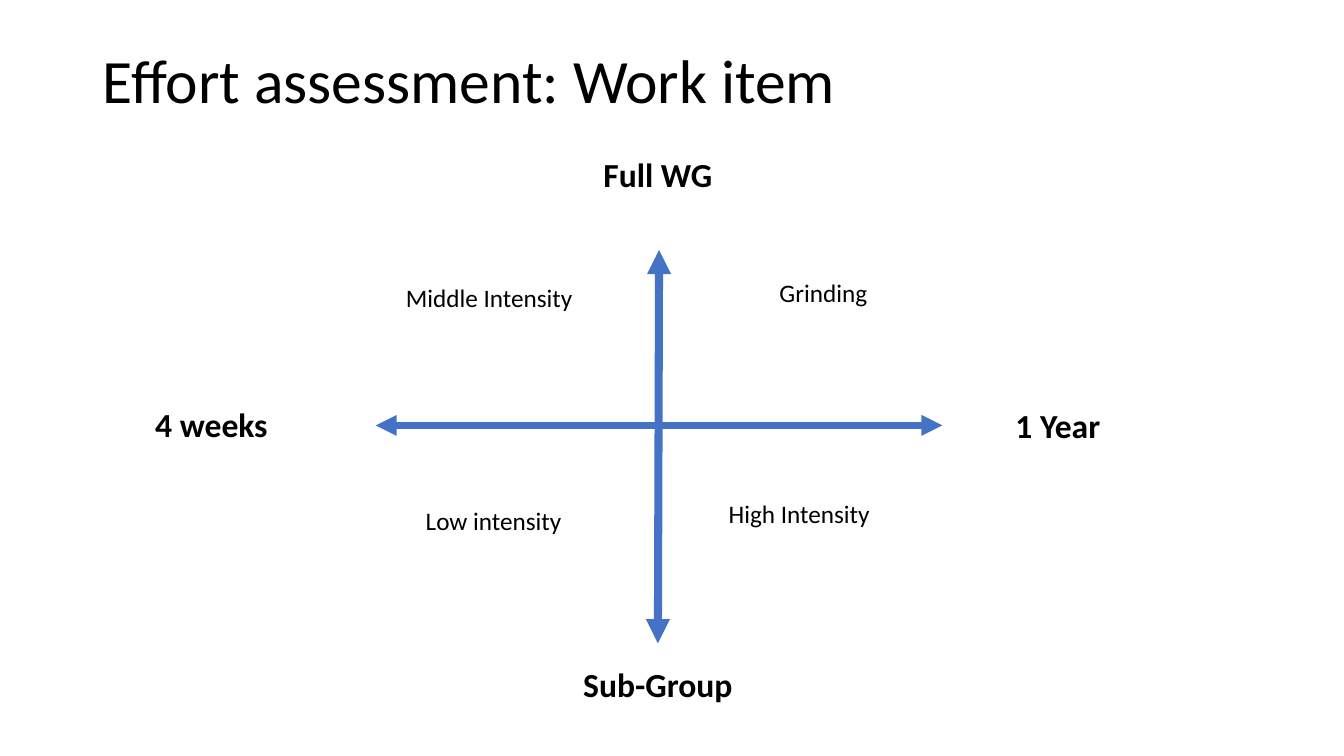
from lxml import etree
from pptx import Presentation
from pptx.dml.color import RGBColor
from pptx.enum.shapes import MSO_CONNECTOR
from pptx.enum.text import MSO_ANCHOR, PP_ALIGN
from pptx.oxml.ns import qn
from pptx.util import Cm, Pt

STRAIGHT = MSO_CONNECTOR.STRAIGHT
MIDDLE = MSO_ANCHOR.MIDDLE
CENTER = PP_ALIGN.CENTER
LEFT = PP_ALIGN.LEFT

BLACK = RGBColor(0x00, 0x00, 0x00)
BLUE = RGBColor(0x44, 0x72, 0xC4)

TITLE_FORMAT = {"size": Pt(44), "bold": False}
AXIS_FORMAT = {"size": Pt(24), "bold": True}
QUADRANT_FORMAT = {"size": Pt(18), "bold": False}

# Text, centre x and y, width and height in cm, relative to the diagram box
AXIS_LABELS = [
    ("Full WG", 12.95, 0.64, 3.66, 1.27),
    ("Sub-Group", 12.95, 13.49, 4.32, 1.27),
    ("4 weeks", 1.7, 6.94, 3.38, 1.27),
    ("1 Year", 23.03, 6.96, 2.67, 1.27),
]
QUADRANT_LABELS = [
    ("Middle Intensity", 8.7, 3.73, 4.75, 1.02),
    ("Grinding", 17.12, 3.61, 2.9, 1.02),
    ("Low intensity", 8.81, 9.37, 3.96, 1.02),
    ("High Intensity", 16.51, 9.17, 4.11, 1.02),
]
# Start x and y, end x and y in cm, width in points
AXES = [
    (12.98, 2.54, 12.95, 12.45, 5.75),
    (5.84, 6.96, 20.12, 6.96, 5),
]


def write_text(shape, text, text_format, alignment):
    paragraph = shape.text_frame.paragraphs[0]
    paragraph.alignment = alignment
    run = paragraph.add_run()
    run.text = text
    run.font.name = "Calibri"
    run.font.color.rgb = BLACK
    for name, value in text_format.items():
        setattr(run.font, name, value)
    return paragraph


def add_title(slide, left, top, width, height):
    title = slide.shapes.title
    box = {"left": left, "top": top, "width": width, "height": height}
    for name, value in box.items():
        setattr(title, name, Cm(value))
    title.text_frame.vertical_anchor = MIDDLE
    paragraph = write_text(title, "Effort assessment: Work item", TITLE_FORMAT, LEFT)
    paragraph.line_spacing = 0.9


def add_axis(slide, start_x, start_y, end_x, end_y, weight):
    axis = slide.shapes.add_connector(
        STRAIGHT, Cm(start_x), Cm(start_y), Cm(end_x), Cm(end_y))
    axis.line.color.rgb = BLUE
    axis.line.width = Pt(weight)
    line = axis.line._get_or_add_ln()
    for end in ("a:headEnd", "a:tailEnd"):
        etree.SubElement(line, qn(end), type="triangle")
    etree.SubElement(axis._element.spPr, qn("a:effectLst"))


def add_label(slide, text, center_x, center_y, width, height, text_format):
    label = slide.shapes.add_textbox(
        Cm(center_x - width / 2), Cm(center_y - height / 2), Cm(width), Cm(height))
    label.text_frame.word_wrap = False
    write_text(label, text, text_format, CENTER)


def add_effort_diagram(slide, left, top):
    # Crossing axes
    for start_x, start_y, end_x, end_y, weight in AXES:
        add_axis(slide, left + start_x, top + start_y, left + end_x, top + end_y, weight)
    # Labels at the axis ends and in the quadrants
    for labels, text_format in ((AXIS_LABELS, AXIS_FORMAT),
                                (QUADRANT_LABELS, QUADRANT_FORMAT)):
        for text, x, y, width, height in labels:
            add_label(slide, text, left + x, top + y, width, height, text_format)


def main():
    presentation = Presentation()
    presentation.slide_width = Cm(33.87)
    presentation.slide_height = Cm(19.05)
    title_only = presentation.slide_layouts[5]
    slide = presentation.slides.add_slide(title_only)
    add_title(slide, 2.34, 1.02, 29.21, 2.18)
    add_effort_diagram(slide, 3.63, 3.76)
    presentation.save("out.pptx")


if __name__ == "__main__":
    main()
